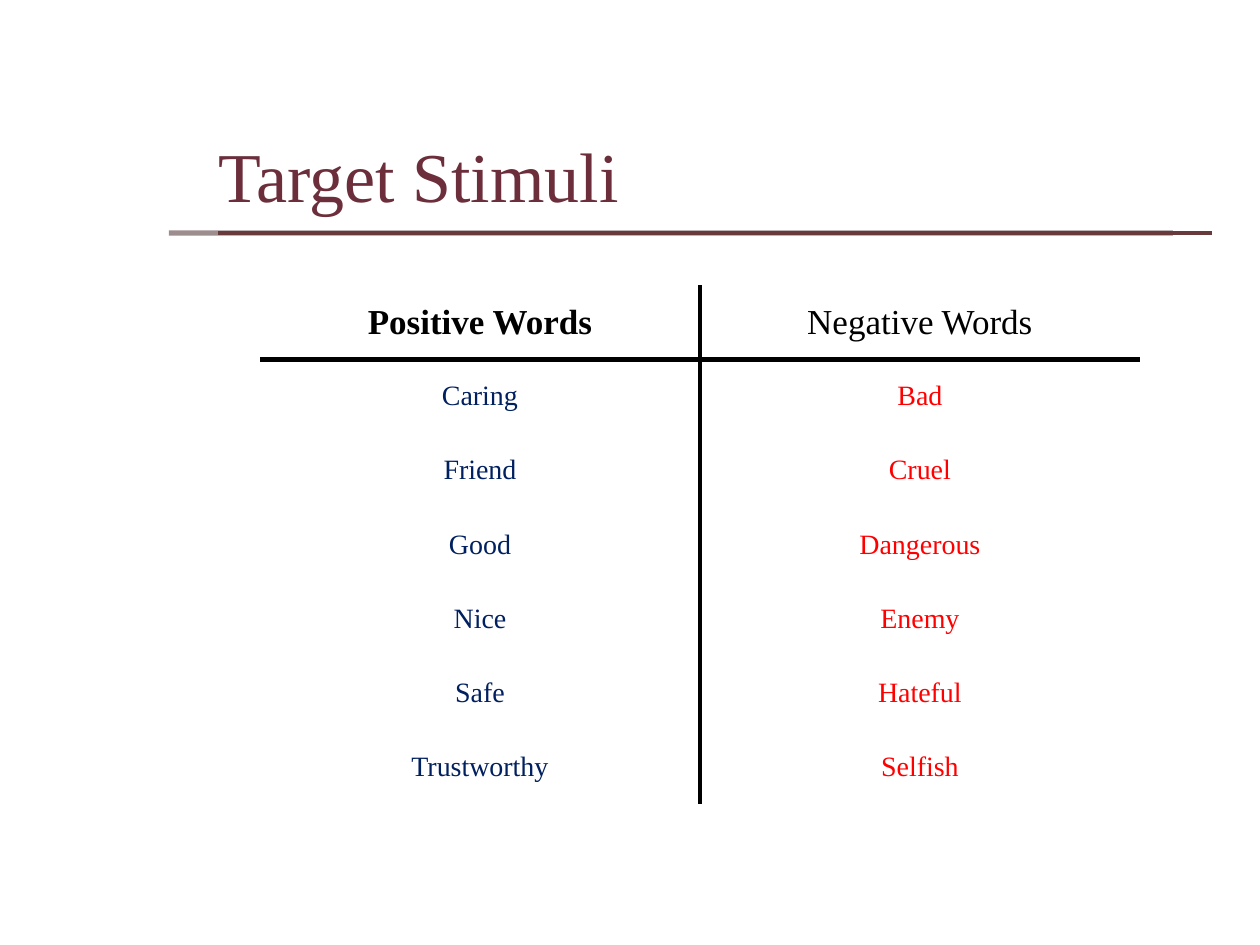
from lxml import etree
from pptx import Presentation
from pptx.dml.color import RGBColor
from pptx.enum.shapes import MSO_CONNECTOR
from pptx.enum.text import MSO_ANCHOR, PP_ALIGN
from pptx.oxml.ns import qn
from pptx.util import Pt

TITLE = "Target Stimuli"
HEADS = ("Positive Words", "Negative Words")
WORDS = [
    ("Caring", "Bad"),
    ("Friend", "Cruel"),
    ("Good", "Dangerous"),
    ("Nice", "Enemy"),
    ("Safe", "Hateful"),
    ("Trustworthy", "Selfish"),
]

FONT = "Times New Roman"
BLACK = RGBColor(0x00, 0x00, 0x00)
NAVY = RGBColor(0x00, 0x20, 0x60)
RED = RGBColor(0xFF, 0x00, 0x00)
WINE = RGBColor(0x6B, 0x2E, 0x3A)
DARK = RGBColor(0x3C, 0x1C, 0x21)
BROWN = RGBColor(0x68, 0x3A, 0x3C)
STRAIGHT = MSO_CONNECTOR.STRAIGHT
BOTTOM, MIDDLE = MSO_ANCHOR.BOTTOM, MSO_ANCHOR.MIDDLE
CENTER = PP_ALIGN.CENTER

RULE_Y = 133.2
RULES = [  # start, end, colour, width, opacity in percent
    (96.5, 670.3, DARK, 3, 50),
    (124.6, 692.6, BROWN, 2.5, 100),
]
LEFT, TOP = 148.6, 162.9
COL_W, ROW_H = 251.4, 42.4


def style(para, size, color, bold=False):
    for run in para.runs:
        font = run.font
        font.name, font.size, font.bold = FONT, Pt(size), bold
        font.color.rgb = color


def add_rule(slide, start, end, color, width, alpha):
    rule = slide.shapes.add_connector(
        STRAIGHT, Pt(start), Pt(RULE_Y), Pt(end), Pt(RULE_Y))
    rule.line.color.rgb = color
    rule.line.width = Pt(width)
    props = rule._element.spPr
    if alpha < 100:
        tint = props.find(".//" + qn("a:srgbClr"))
        etree.SubElement(tint, qn("a:alpha"), val=str(alpha * 1000))
    etree.SubElement(props, qn("a:effectLst"))


def add_title(slide):
    box = slide.shapes.add_textbox(Pt(118), Pt(28.8), Pt(552.2), Pt(104.4))
    frame = box.text_frame
    frame.word_wrap = True
    frame.vertical_anchor = BOTTOM
    frame.margin_bottom = Pt(9)
    frame.text = TITLE
    para = frame.paragraphs[0]
    para.line_spacing = 0.9
    style(para, 40, WINE)


def set_edges(cell, edges):
    """Draw 3 pt black borders on the given edges and none on the others."""
    props = cell._tc.get_or_add_tcPr()
    for edge in "LRTB":
        line = etree.SubElement(props, qn("a:ln" + edge), w=str(Pt(3)))
        if edge in edges:
            fill = etree.SubElement(line, qn("a:solidFill"))
            etree.SubElement(fill, qn("a:srgbClr"), val=str(BLACK))
        else:
            etree.SubElement(line, qn("a:noFill"))


def add_words(slide):
    rows = [HEADS] + WORDS
    table = slide.shapes.add_table(
        len(rows), 2, Pt(LEFT), Pt(TOP),
        Pt(2 * COL_W), Pt(len(rows) * ROW_H)).table
    table.first_row = table.horz_banding = False
    for col in table.columns:
        col.width = Pt(COL_W)
    for r, row in enumerate(rows):
        table.rows[r].height = Pt(ROW_H)
        for c, word in enumerate(row):
            cell = table.cell(r, c)
            set_edges(cell, "RL"[c] + {0: "B", 1: "T"}.get(r, ""))
            cell.fill.background()
            cell.vertical_anchor = MIDDLE
            cell.text = word
            para = cell.text_frame.paragraphs[0]
            para.alignment = CENTER
            if r == 0:
                style(para, 20, BLACK, bold=c == 0)
            else:
                style(para, 16, (NAVY, RED)[c])


def main():
    deck = Presentation()
    deck.slide_width, deck.slide_height = Pt(720), Pt(540)
    slide = deck.slides.add_slide(deck.slide_layouts[6])
    for rule in RULES:
        add_rule(slide, *rule)
    add_title(slide)
    add_words(slide)
    deck.save("out.pptx")


if __name__ == "__main__":
    main()
